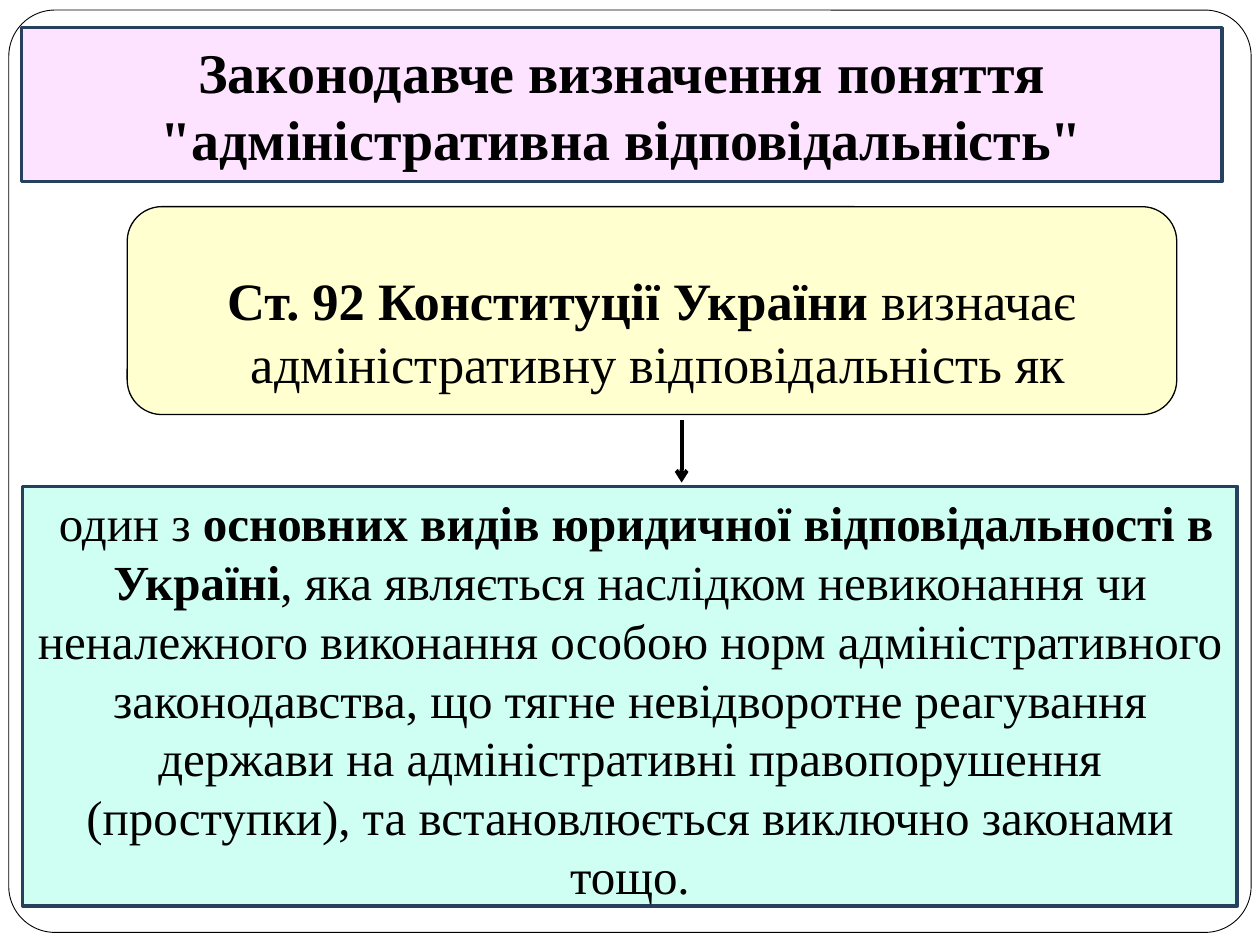
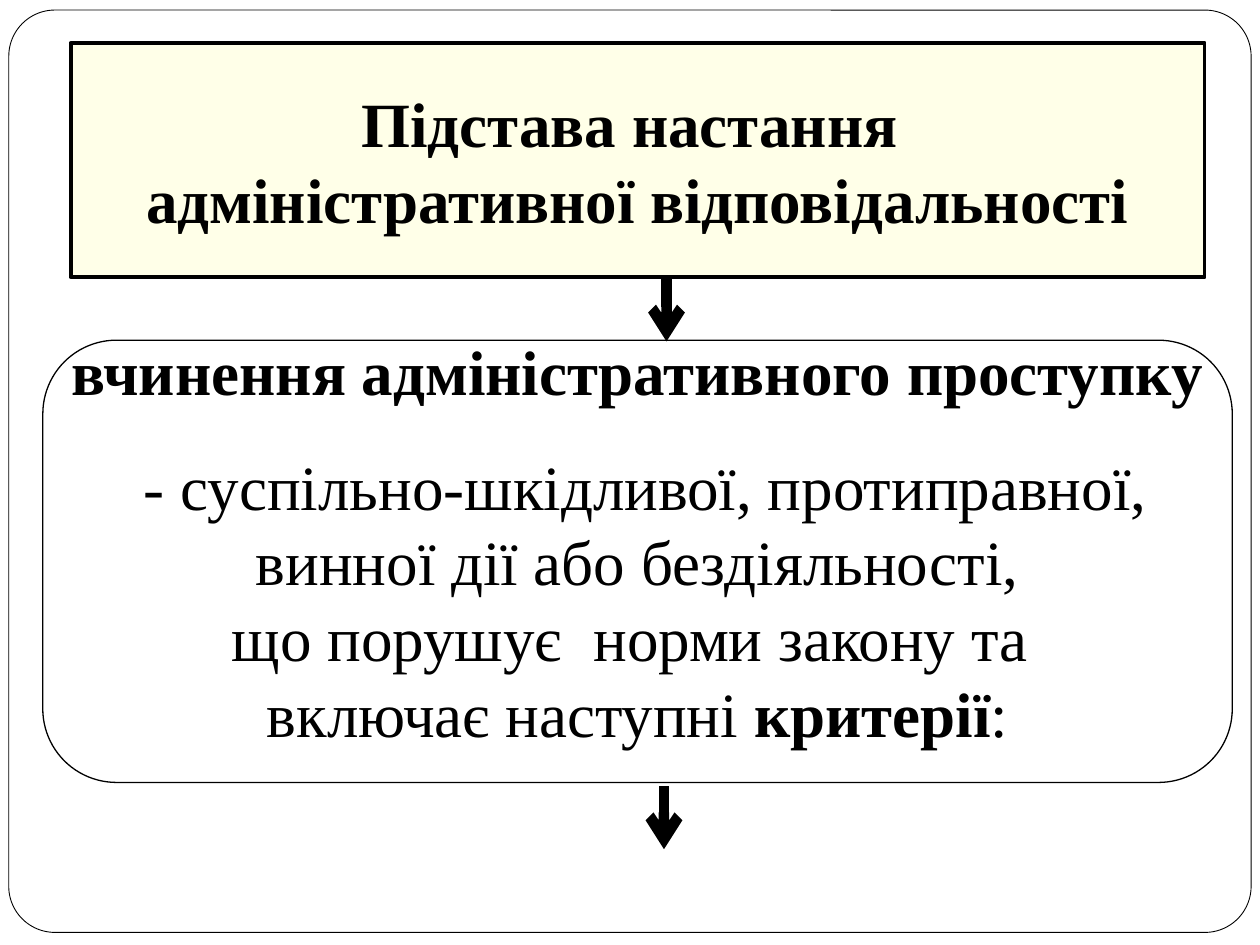
from lxml import etree
from pptx import Presentation
from pptx.dml.color import RGBColor
from pptx.enum import shapes, text
from pptx.oxml.ns import qn
from pptx.util import Inches, Pt

BLACK = RGBColor(0x00, 0x00, 0x00)
WHITE = RGBColor(0xFF, 0xFF, 0xFF)
NAVY = RGBColor(0x27, 0x40, 0x5E)
PINK = RGBColor(0xFD, 0xE3, 0xFF)
MINT = RGBColor(0xCF, 0xFF, 0xF3)
YELLOW = RGBColor(0xFF, 0xFF, 0x00)

FONT = "Times New Roman"
RECT = shapes.MSO_SHAPE.RECTANGLE
ROUND = shapes.MSO_SHAPE.ROUNDED_RECTANGLE
TOP, MIDDLE = text.MSO_ANCHOR.TOP, text.MSO_ANCHOR.MIDDLE

FRAME = dict(at=(0.07, 0.08, 9.86, 7.32), fill=WHITE, line=BLACK, width=0.5)
ARROW_LENGTH = 0.5

SLIDES = [
    dict(
        title=dict(
            at=(0.17, 0.22, 9.53, 1.22), kind=ROUND, fill=PINK, line=NAVY, width=2, size=32,
            paras=[[("Законодавче визначення поняття", True)],
                   [("\"адміністративна відповідальність\"", True)]]),
        boxes=[
            dict(at=(0.18, 3.86, 9.64, 3.33), kind=RECT, fill=MINT, line=NAVY, width=2,
                 size=28, anchor=TOP,
                 paras=[[(" один з ", False),
                         ("основних видів юридичної відповідальності в Україні", True),
                         (", яка являється наслідком невиконання чи неналежного виконання "
                          "особою норм адміністративного законодавства, що тягне невідворотне "
                          "реагування держави на адміністративні правопорушення (проступки), "
                          "та встановлюється виключно законами тощо.", False)]]),
            dict(at=(1.01, 1.64, 8.33, 1.65), kind=ROUND, fill=YELLOW, alpha=19, line=BLACK,
                 width=0.75, size=30, wrap=False, insets=(0.37, 0.05),
                 paras=[[("Ст. 92 Конституції України", True), (" визначає", False)],
                        [(" адміністративну відповідальність як", False)]]),
        ],
        arrows=[(5.41, 3.33, 2.25)],
    ),
    dict(
        title=dict(
            at=(0.56, 0.34, 9, 1.86), kind=RECT, fill=YELLOW, alpha=9, line=BLACK, width=2.25,
            size=36, wrap=False,
            paras=[[("Підстава настання ", True)],
                   [("адміністративної відповідальності", True)]]),
        boxes=[
            dict(at=(0.34, 2.7, 9.44, 3.51), kind=ROUND, fill=None, line=BLACK, width=0.75,
                 size=36, wrap=False, insets=(0.05, 0.37), gaps={1: 22.5},
                 paras=[[("вчинення адміністративного проступку", True)],
                        [(" ", True), ("- суспільно-шкідливої, протиправної,", False)],
                        [(" винної дії або бездіяльності, ", False)],
                        [("що порушує  норми закону та ", False)],
                        [("включає наступні ", False), ("критерії", True), (":", False)]]),
        ],
        arrows=[(5.29, 2.21, 6), (5.27, 6.24, 6)],
    ),
]


def paint(sp, fill, line, width, alpha=None):
    if fill is None:
        sp.fill.background()
    else:
        sp.fill.solid()
        sp.fill.fore_color.rgb = fill
    if alpha:
        color = sp.element.spPr.find(qn("a:solidFill"))[0]
        etree.SubElement(color, qn("a:alpha"), val=str(alpha * 1000))
    sp.line.color.rgb = line
    sp.line.width = Pt(width)


def write(sp, paras, size, anchor=MIDDLE, wrap=True, insets=(0.05, 0.05), gaps=None):
    tf = sp.text_frame
    values = dict(auto_size=text.MSO_AUTO_SIZE.NONE, vertical_anchor=anchor, word_wrap=wrap,
                  margin_left=Inches(0.1), margin_right=Inches(0.1),
                  margin_top=Inches(insets[0]), margin_bottom=Inches(insets[1]))
    for name, value in values.items():
        setattr(tf, name, value)
    for i, runs in enumerate(paras):
        p = tf.add_paragraph() if i else tf.paragraphs[0]
        p.alignment = text.PP_ALIGN.CENTER
        if gaps and i in gaps:
            p.space_before = Pt(gaps[i])
        for words, bold in runs:
            r = p.add_run()
            r.text = words
            for name, value in dict(name=FONT, size=Pt(size), bold=bold).items():
                setattr(r.font, name, value)
            r.font.color.rgb = BLACK


def add_box(s, at, kind):
    sp = s.shapes.add_shape(kind, *map(Inches, at))
    sp.shadow.inherit = False
    return sp


def place_title(s, at, kind):
    sp = s.shapes.title
    sp.left, sp.top, sp.width, sp.height = map(Inches, at)
    preset = "roundRect" if kind == ROUND else "rect"
    geom = etree.Element(qn("a:prstGeom"), prst=preset)
    etree.SubElement(geom, qn("a:avLst"))
    sp.element.spPr.insert(1, geom)
    return sp


def fill_box(sp, at, kind, fill, line, width, alpha=None, **words):
    paint(sp, fill, line, width, alpha)
    write(sp, **words)


def add_arrow(s, x, y, width):
    ends = map(Inches, (x, y, x, y + ARROW_LENGTH))
    c = s.shapes.add_connector(shapes.MSO_CONNECTOR.STRAIGHT, *ends)
    c.line.color.rgb = BLACK
    c.line.width = Pt(width)
    etree.SubElement(c.line._get_or_add_ln(), qn("a:tailEnd"), type="arrow")
    etree.SubElement(c.element.spPr, qn("a:effectLst"))


def add_frame(layout, s):
    sp = add_box(s, FRAME["at"], ROUND)
    sp.adjustments[0] = 0.05
    paint(sp, FRAME["fill"], FRAME["line"], FRAME["width"])
    sp.element.nvSpPr.cNvPr.set("id", "20")
    layout.shapes.element.insert(2, sp.element)


def main():
    prs = Presentation()
    prs.slide_width, prs.slide_height = Inches(10), Inches(7.5)
    layout = prs.slide_layouts[5]
    for i, content in enumerate(SLIDES):
        s = prs.slides.add_slide(layout)
        if i == 0:
            add_frame(layout, s)
        fill_box(place_title(s, content["title"]["at"], content["title"]["kind"]),
                 **content["title"])
        for box in content["boxes"]:
            fill_box(add_box(s, box["at"], box["kind"]), **box)
        for arrow in content["arrows"]:
            add_arrow(s, *arrow)
    prs.save("out.pptx")


if __name__ == "__main__":
    main()
